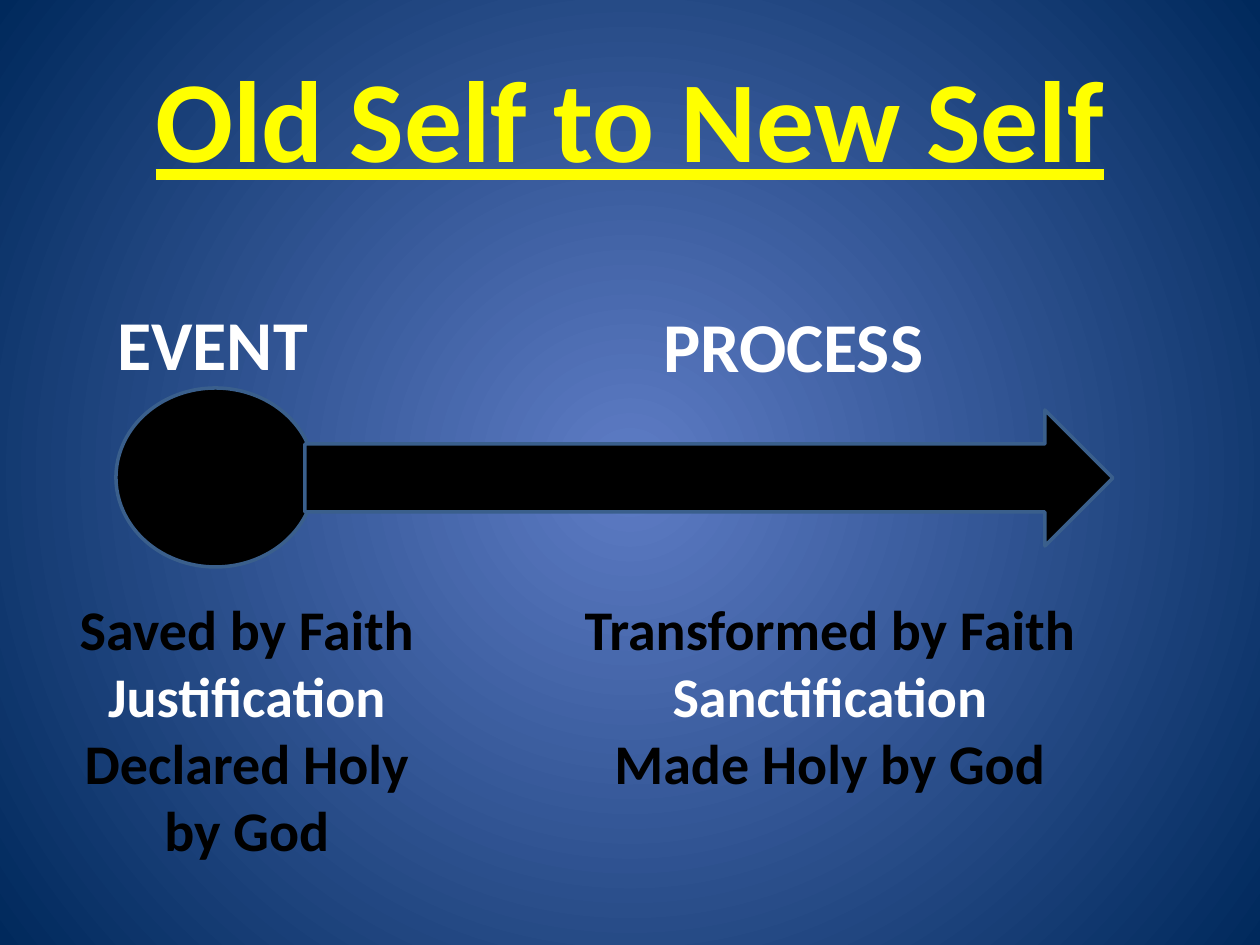
from lxml.etree import SubElement
from pptx import Presentation
from pptx.dml.color import RGBColor
from pptx.enum.shapes import MSO_SHAPE
from pptx.enum.text import MSO_ANCHOR, PP_ALIGN
from pptx.oxml.ns import qn
from pptx.util import Emu, Pt

COLORS = {
    "title": "FFFF00",
    "light": "FFFFFF",
    "dark": "000000",
    "outline": "3A5F8C",
    "glow": "5E7CC5",
    "edge": "00295C",
}
EMU_PER_PX = 914400 / 126


def px(length):
    return Emu(round(length * EMU_PER_PX))


def color(key):
    return RGBColor.from_string(COLORS[key])


def write(paragraph, text, size, ink="light", align=PP_ALIGN.LEFT, underline=None):
    paragraph.alignment = align
    run = paragraph.add_run()
    run.text = text
    font = run.font
    font.name, font.size, font.bold = "Calibri", Pt(size), True
    font.underline = underline
    font.color.rgb = color(ink)


class Diagram:
    """Draws the parts of a two-stage diagram on one slide."""

    def __init__(self, slide):
        self.slide = slide

    def background(self, center, edge):
        fill = self.slide.background.fill
        fill.gradient()
        for stop, key, position in zip(fill.gradient_stops, (center, edge), (0, 1)):
            stop.color.rgb = color(key)
            stop.position = position
        gradient = self.slide.element.find(".//" + qn("a:gradFill"))
        gradient.remove(gradient.find(qn("a:lin")))
        path = SubElement(gradient, qn("a:path"), path="circle")
        SubElement(path, qn("a:fillToRect"), dict.fromkeys("ltrb", "50000"))

    def text(self, box, lines, anchor=MSO_ANCHOR.TOP, **style):
        frame = self.slide.shapes.add_textbox(*map(px, box)).text_frame
        frame.word_wrap = True
        frame.vertical_anchor = anchor
        for index, (line, ink) in enumerate(lines):
            paragraph = frame.add_paragraph() if index else frame.paragraphs[0]
            write(paragraph, line, ink=ink, **style)

    def shape(self, kind, box):
        shape = self.slide.shapes.add_shape(kind, *map(px, box))
        shape.shadow.inherit = False
        shape.fill.solid()
        shape.fill.fore_color.rgb = color("dark")
        shape.line.color.rgb = color("outline")
        shape.line.width = Pt(2)


def main():
    presentation = Presentation()
    presentation.slide_width, presentation.slide_height = px(1260), px(945)
    diagram = Diagram(presentation.slides.add_slide(presentation.slide_layouts[6]))
    diagram.background("glow", "edge")
    diagram.text((63, 38, 1134, 157), [("Old Self to New Self", "title")],
                 anchor=MSO_ANCHOR.MIDDLE, size=66, align=PP_ALIGN.CENTER, underline=True)
    diagram.shape(MSO_SHAPE.OVAL, (116, 388, 199, 179))
    diagram.shape(MSO_SHAPE.RIGHT_ARROW, (305, 410, 808, 136))

    stages = [
        ("EVENT", (105, 294, 231, 97), (53, 588, 388, 285),
         ("Saved by Faith", "Justification", "Declared Holy by God")),
        ("PROCESS", (651, 296, 410, 97), (557, 588, 546, 217),
         ("Transformed by Faith", "Sanctification", "Made Holy by God")),
    ]
    for heading, heading_box, meaning_box, meaning in stages:
        diagram.text(heading_box, [(heading, "light")], size=40)
        diagram.text(meaning_box, zip(meaning, ("dark", "light", "dark")),
                     size=32, align=PP_ALIGN.CENTER)
    presentation.save("out.pptx")


if __name__ == "__main__":
    main()
